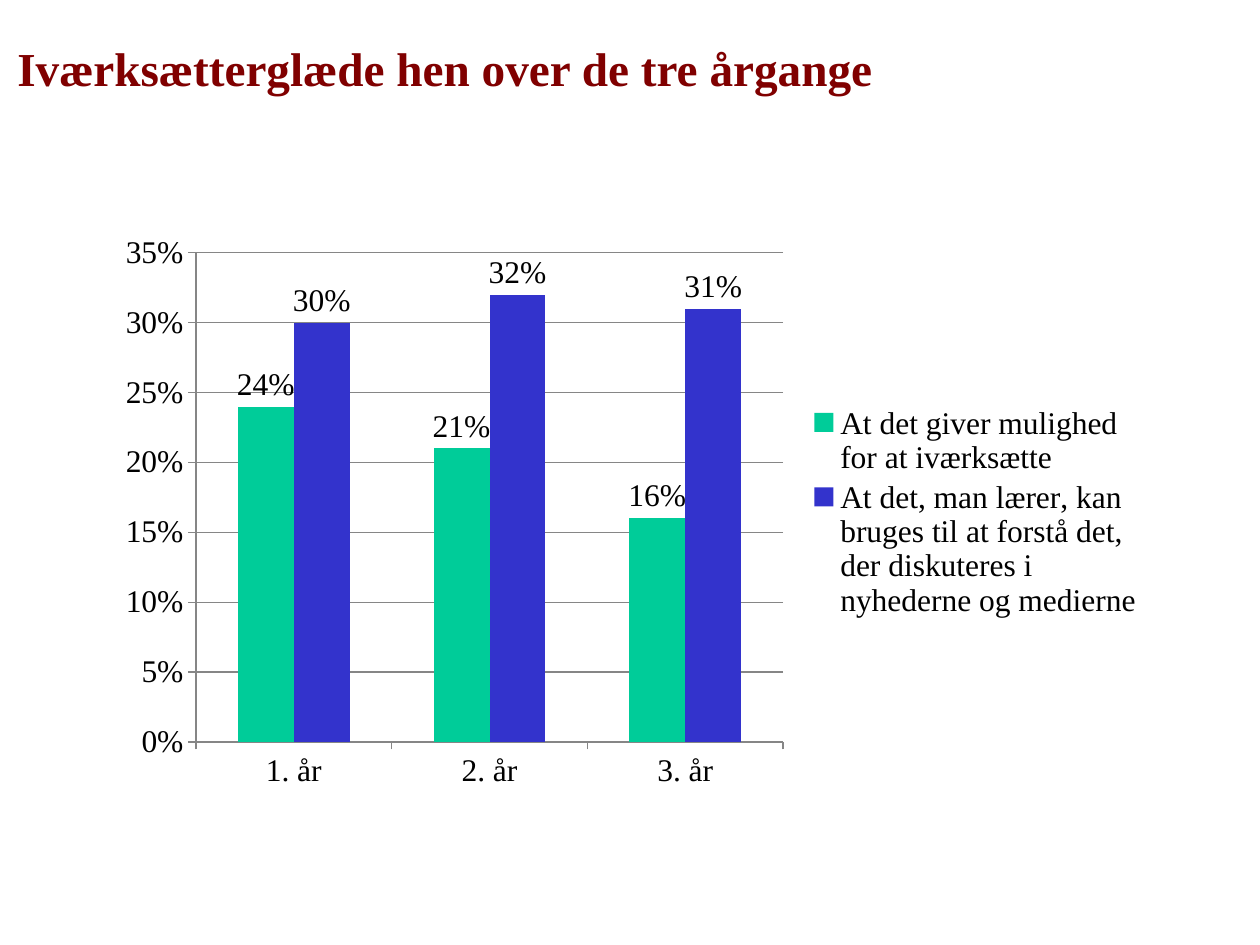
"""Build a slide with a clustered column chart of student motivation by year."""
from dataclasses import dataclass

from pptx import Presentation
from pptx.chart.data import CategoryChartData
from pptx.dml.color import RGBColor as Color
from pptx.enum.chart import (
    XL_CHART_TYPE as ChartType,
    XL_LABEL_POSITION as LabelPosition,
    XL_LEGEND_POSITION as LegendPosition,
    XL_TICK_MARK as TickMark,
)
from pptx.enum.text import MSO_AUTO_SIZE as AutoSize
from pptx.util import Cm, Pt

TITLE = "Iværksætterglæde hen over de tre årgange"
YEARS = ["1. år", "2. år", "3. år"]
SERIES = [
    ("At det giver mulighed for at iværksætte", (0.24, 0.21, 0.16)),
    (
        "At det, man lærer, kan bruges til at forstå det, "
        "der diskuteres i nyhederne og medierne",
        (0.30, 0.32, 0.31),
    ),
]
TITLE_BOX = (0.1, 0.66, 18.21, 1.42)
CHART_BOX = (2.11, 4.52, 21.21, 11.61)
PERCENT = "0%"


@dataclass(frozen=True)
class Theme:
    """Fonts, sizes and colours of the slide."""

    font: str = "Times New Roman"
    title_size: float = 27
    chart_size: float = 18
    title: str = "800000"
    text: str = "000000"
    line: str = "868686"
    bars: tuple = ("00CC99", "3333CC")


THEME = Theme()


def style_font(font, size, color, bold=False):
    """Apply the theme typeface with a size, colour and weight."""
    font.name = THEME.font
    font.size = Pt(size)
    font.bold = bold
    font.color.rgb = Color.from_string(color)


def style_line(line):
    """Give a chart line the theme's thin grey stroke."""
    line.color.rgb = Color.from_string(THEME.line)
    line.width = Pt(0.75)


def add_title(slide):
    """Add the heading."""
    shape = slide.shapes.add_textbox(*map(Cm, TITLE_BOX))
    frame = shape.text_frame
    frame.word_wrap = True
    frame.auto_size = AutoSize.SHAPE_TO_FIT_TEXT
    run = frame.paragraphs[0].add_run()
    run.text = TITLE
    style_font(run.font, THEME.title_size, THEME.title, bold=True)


def style_axes(chart):
    """Format both axes and the value gridlines."""
    for axis in (chart.category_axis, chart.value_axis):
        axis.major_tick_mark = TickMark.OUTSIDE
        axis.minor_tick_mark = TickMark.NONE
        style_line(axis.format.line)
    values = chart.value_axis
    values.minimum_scale, values.maximum_scale = 0, 0.35
    values.major_unit = 0.05
    values.has_major_gridlines = True
    style_line(values.major_gridlines.format.line)
    values.tick_labels.number_format = PERCENT
    values.tick_labels.number_format_is_linked = False


def style_series(series, color):
    """Colour the columns and label them with their values."""
    series.invert_if_negative = False
    series.format.fill.solid()
    series.format.fill.fore_color.rgb = Color.from_string(color)
    labels = series.data_labels
    labels.show_value = True
    labels.number_format = PERCENT
    labels.number_format_is_linked = False
    labels.position = LabelPosition.OUTSIDE_END
    style_font(labels.font, THEME.chart_size, THEME.text)


def add_chart(slide):
    """Add the column chart with its legend."""
    data = CategoryChartData(number_format=PERCENT)
    data.categories = YEARS
    for name, values in SERIES:
        data.add_series(name, values)
    chart = slide.shapes.add_chart(
        ChartType.COLUMN_CLUSTERED, *map(Cm, CHART_BOX), data
    ).chart
    style_font(chart.font, THEME.chart_size, THEME.text)
    chart.has_title = False
    chart.has_legend = True
    chart.legend.position = LegendPosition.RIGHT
    chart.legend.include_in_layout = False
    style_axes(chart)
    plot = chart.plots[0]
    plot.vary_by_categories = False
    plot.gap_width = 150
    plot.overlap = 0
    for series, color in zip(plot.series, THEME.bars):
        style_series(series, color)


def main():
    """Assemble and save the presentation."""
    presentation = Presentation()
    presentation.slide_width, presentation.slide_height = Cm(25.4), Cm(19.05)
    slide = presentation.slides.add_slide(presentation.slide_layouts[6])
    add_title(slide)
    add_chart(slide)
    presentation.save("out.pptx")


if __name__ == "__main__":
    main()
